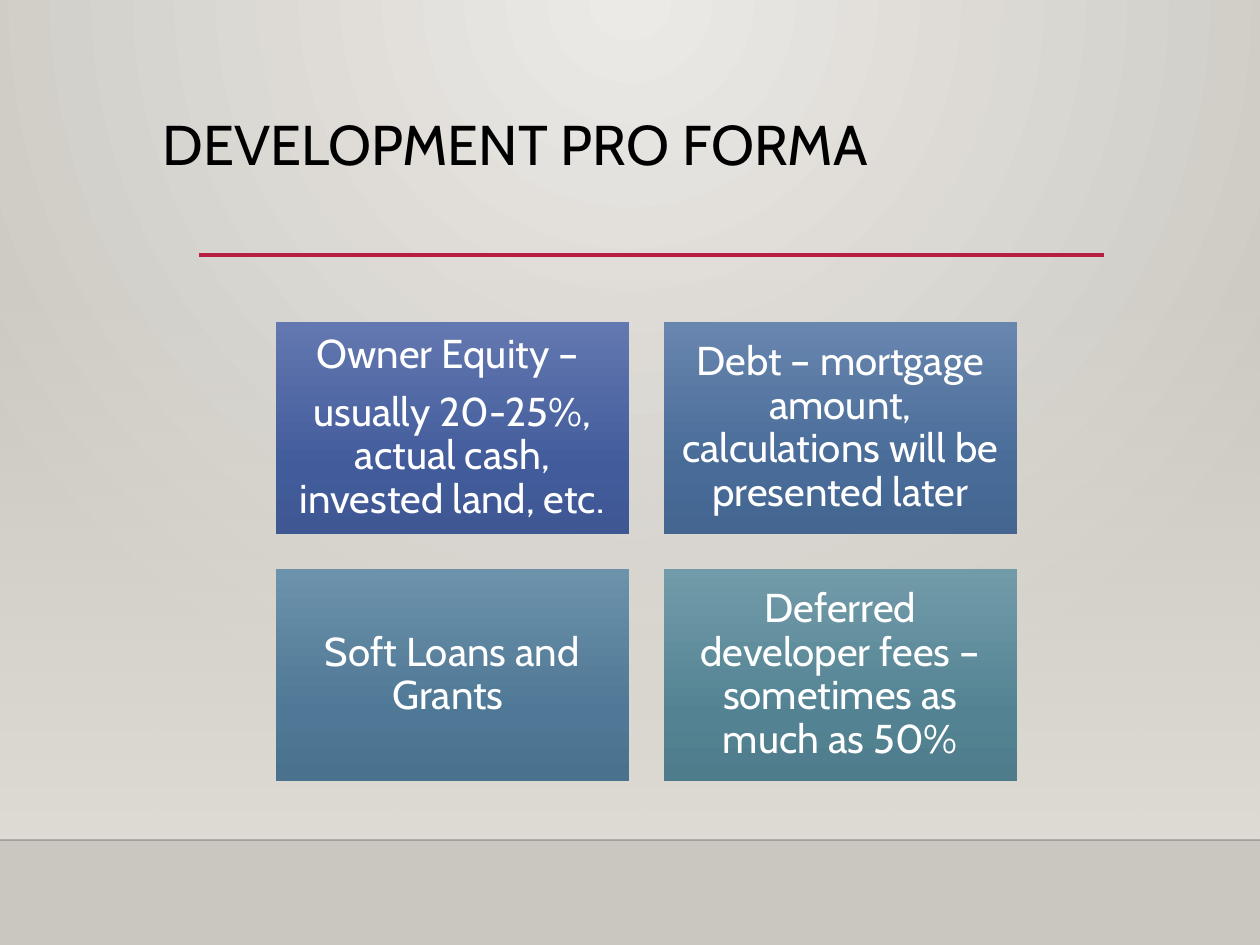
from dataclasses import dataclass

from lxml.etree import SubElement
from pptx import Presentation
from pptx.dml.color import RGBColor
from pptx.enum.shapes import MSO_CONNECTOR, MSO_SHAPE
from pptx.enum.text import MSO_ANCHOR, MSO_AUTO_SIZE, PP_ALIGN
from pptx.oxml.ns import qn
from pptx.util import Emu, Pt


@dataclass(frozen=True)
class Theme:
    font: str = "Cabin"
    title_size: int = 32
    card_size: int = 23
    title: str = "000000"
    card_text: str = "FFFFFF"
    accent: str = "B71E42"
    edge: str = "000001"
    backdrop: tuple = ((0, "ECEAE7"), (100, "CAC7C1"))
    wall: tuple = ((0, "DFDBD5", 0), (100, "DFDBD5"))


THEME = Theme()

# Each card: gradient colours at 0, 69 and 100 percent, then its paragraphs
CARDS = [
    (("6378B0", "425B9B", "3F5793"),
     ["Owner Equity – ", "usually 20-25%, actual cash, invested land, etc."]),
    (("6886AE", "486B98", "446690"),
     ["Debt – mortgage amount, calculations will be presented later"]),
    (("6D92AB", "4E7895", "4A728E"), ["Soft Loans and Grants "]),
    (("729BA9", "538393", "4F7C8B"),
     ["Deferred developer fees – sometimes as much as 50%"]),
]


def px(n):
    return Emu(round(n * 914400 / 126))


def set_alpha(color, percent):
    SubElement(color, qn("a:alpha"), val=str(percent * 1000))


def set_gradient(parent, stops, circle=None):
    """Replace the solid fill in parent with a downward or circular gradient."""
    solid = parent.find(qn("a:solidFill"))
    grad = parent.makeelement(qn("a:gradFill"), {"rotWithShape": "1"})
    parent.replace(solid, grad)
    gs_list = SubElement(grad, qn("a:gsLst"))
    for pos, rgb, *alpha in stops:
        gs = SubElement(gs_list, qn("a:gs"), pos=str(pos * 1000))
        color = SubElement(gs, qn("a:srgbClr"), val=rgb)
        if alpha:
            set_alpha(color, alpha[0])
    if circle:
        shade = SubElement(grad, qn("a:path"), {"path": "circle"})
        SubElement(shade, qn("a:fillToRect"),
                   {side: str(v * 1000) for side, v in zip("ltrb", circle)})
    else:
        SubElement(grad, qn("a:lin"), ang="5400000", scaled="0")


def add_panel(slide, box, stops):
    sp = slide.shapes.add_shape(MSO_SHAPE.RECTANGLE, *map(px, box))
    sp.shadow.inherit = False
    sp.line.fill.background()
    sp.fill.solid()
    set_gradient(sp._element.spPr, stops)
    return sp


def add_rule(slide, x, y, w, rgb, width, alpha=None):
    line = slide.shapes.add_connector(
        MSO_CONNECTOR.STRAIGHT, px(x), px(y), px(x + w), px(y))
    line.line.color.rgb = RGBColor.from_string(rgb)
    line.line.width = Pt(width)
    sp_pr = line._element.spPr
    if alpha is not None:
        set_alpha(next(sp_pr.iter(qn("a:srgbClr"))), alpha)
    SubElement(sp_pr, qn("a:effectLst"))


def add_run(p, text, size, rgb):
    r = p.add_run()
    r.text = text
    r.font.name = THEME.font
    r.font.size = Pt(size)
    r.font.color.rgb = RGBColor.from_string(rgb)
    p.line_spacing = 0.9


def draw_backdrop(slide, box):
    x, y, w, h = box
    slide.background.fill.solid()
    bg_pr = next(slide._element.iter(qn("p:bgPr")))
    set_gradient(bg_pr, THEME.backdrop, circle=(43, 0, 43, 100))
    # Wall fades in down to the floor edge
    floor = y + 840
    add_panel(slide, (x, y + 277, w, floor - y - 277), THEME.wall)
    add_rule(slide, x, floor, w, THEME.edge, 1, alpha=20)


def draw_title(slide, box, text):
    x, y, w, h = box
    add_rule(slide, x + 49, y + h - 1, 905, THEME.accent, 2.5)
    sp = slide.shapes.title
    sp.left, sp.top, sp.width, sp.height = map(px, box)
    tf = sp.text_frame
    tf.auto_size = MSO_AUTO_SIZE.NONE
    tf.word_wrap = True
    tf.vertical_anchor = MSO_ANCHOR.TOP
    p = tf.paragraphs[0]
    p.alignment = PP_ALIGN.LEFT
    add_run(p, text, THEME.title_size, THEME.title)


def draw_card(slide, box, colors, paragraphs):
    sp = add_panel(slide, box, zip((0, 69, 100), colors))
    tf = sp.text_frame
    tf.word_wrap = True
    tf.vertical_anchor = MSO_ANCHOR.MIDDLE
    tf.margin_left = tf.margin_right = px(13)
    tf.margin_top = tf.margin_bottom = px(13)
    for i, text in enumerate(paragraphs):
        p = tf.add_paragraph() if i else tf.paragraphs[0]
        p.alignment = PP_ALIGN.CENTER
        p.space_after = Pt(8)
        add_run(p, text, THEME.card_size, THEME.card_text)


def draw_card_grid(slide, box, cards, columns=2, gap=35):
    x, y, w, h = box
    rows = -(-len(cards) // columns)
    card_w = (w - gap * (columns - 1)) // columns
    card_h = (h - gap * (rows - 1)) // rows
    for i, (colors, paragraphs) in enumerate(cards):
        row, col = divmod(i, columns)
        card = (x + col * (card_w + gap), y + row * (card_h + gap),
                card_w, card_h)
        draw_card(slide, card, colors, paragraphs)


def main():
    prs = Presentation()
    prs.slide_width, prs.slide_height = px(1260), px(945)
    slide = prs.slides.add_slide(prs.slide_layouts[5])
    draw_backdrop(slide, (0, 0, 1260, 945))
    draw_title(slide, (150, 111, 993, 145), "DEVELOPMENT PRO FORMA")
    draw_card_grid(slide, (276, 322, 741, 459), CARDS)
    prs.save("out.pptx")


if __name__ == "__main__":
    main()
